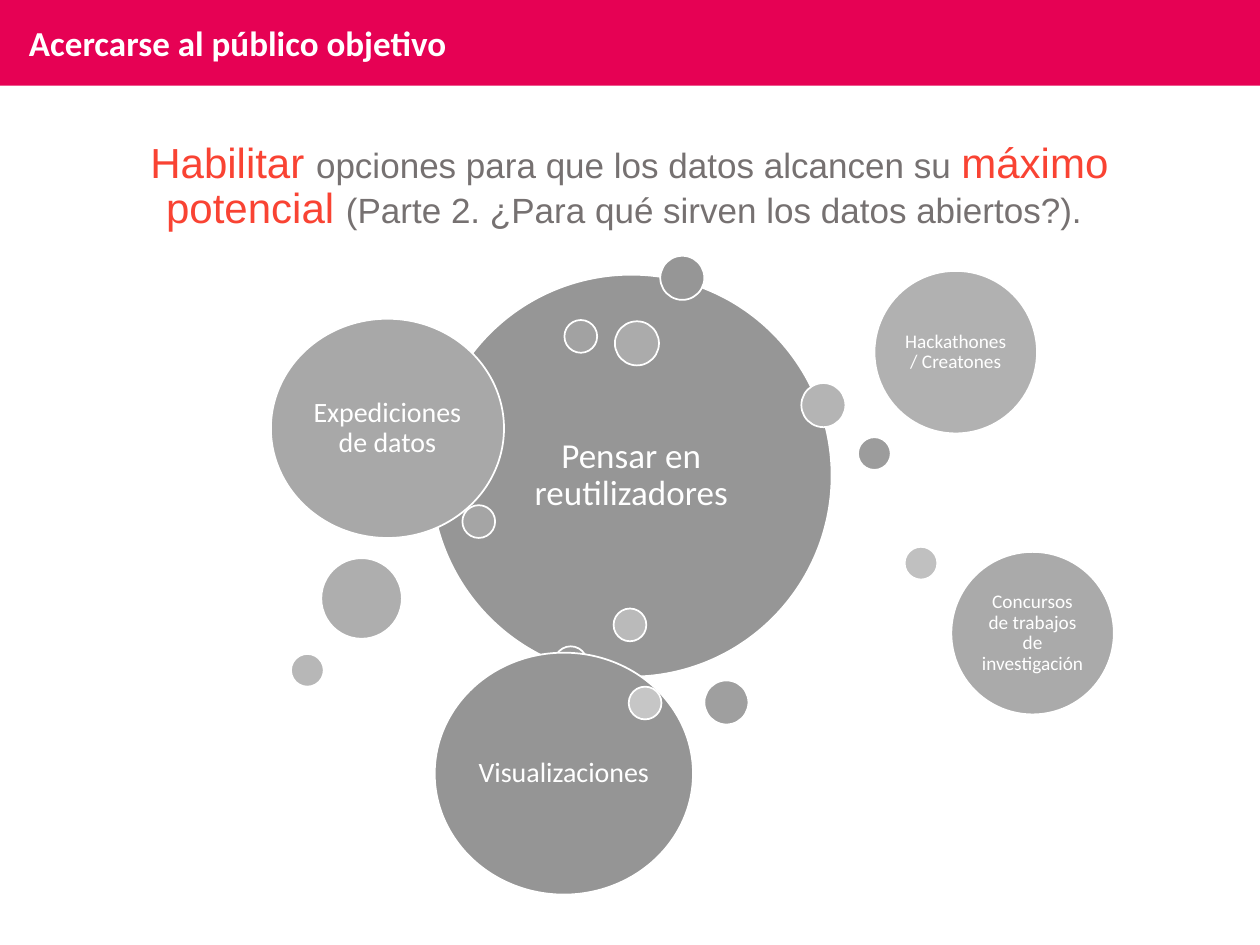
from pptx import Presentation
from pptx.dml.color import RGBColor
from pptx.enum.shapes import MSO_SHAPE as SHAPE
from pptx.enum.text import MSO_ANCHOR as ANCHOR, PP_ALIGN as ALIGN
from pptx.util import Inches, Pt

PINK = RGBColor(0xE6, 0x01, 0x54)
RED = RGBColor(0xF9, 0x43, 0x33)
GRAY = RGBColor(0x76, 0x71, 0x71)
WHITE = RGBColor(0xFF, 0xFF, 0xFF)

prs = Presentation()
prs.slide_width, prs.slide_height = Inches(10), Inches(7.5)
COL, ROW = prs.slide_width / 100, prs.slide_height / 75
slide = prs.slides.add_slide(prs.slide_layouts[5])
shapes = slide.shapes


def box(x, y, w, h):
    return int(x * COL), int(y * ROW), int(w * COL), int(h * ROW)


def style(r, font, size, color):
    r.font.name, r.font.size, r.font.color.rgb = font, Pt(size), color


band = shapes.add_shape(SHAPE.RECTANGLE, *box(0, 0, 100, 6.8))
band.shadow.inherit = False
band.fill.solid()
band.fill.fore_color.rgb = PINK
band.line.fill.background()

title = shapes.title
title.left, title.top, title.width, title.height = box(1.3, 1.2, 57.8, 4.4)
title.text_frame.text = "Acercarse al público objetivo"
p = title.text_frame.paragraphs[0]
p.alignment = ALIGN.LEFT
style(p.runs[0], "Calibri", 20, WHITE)
p.runs[0].font.bold = True
title._element.addprevious(band._element)

tf = shapes.add_textbox(*box(6.6, 10.8, 86.7, 41.4)).text_frame
tf.word_wrap = True
p = tf.paragraphs[0]
p.alignment, p.line_spacing, p.space_before = ALIGN.CENTER, 0.9, Pt(10)
for text, size, color in [
    ("Habilitar ", 24, RED),
    ("opciones para que los datos alcancen su ", 20, GRAY),
    ("máximo potencial ", 24, RED),
    ("(Parte 2. ¿Para qué sirven los datos abiertos?). ", 20, GRAY),
]:
    r = p.add_run()
    r.text = text
    style(r, "Arial", size, color)

S, M, L = 2.6, 3.5, 12.9
bubbles = [
    (34.2, 21.8, 31.8, 31.9, 0x96, "Pensar en reutilizadores", 20, 0.8, 0.8),
    (52.4, 20.3, M, M, 0x96),
    (44, 51.3, S, S, 0x99),
    (68.1, 34.7, S, S, 0x9C),
    (55.9, 54, M, M, 0x9F),
    (44.8, 25.4, S, S, 0xA2),
    (36.7, 40.1, S, S, 0xA5),
    (21.5, 25.3, 18.5, 17.4, 0xA8, "Expediciones de datos", 16, 0.2, 0.7),
    (48.8, 25.5, M, M, 0xAB),
    (25.5, 44.3, 6.4, 6.4, 0xAE),
    (69.4, 21.5, L, L, 0xB1, "Hackathones/ Creatones", 11, 0.5, 0.5),
    (63.6, 30.4, M, M, 0xB4),
    (23.1, 51.9, S, S, 0xB7),
    (48.7, 48.3, S, S, 0xBA),
    (75.5, 43.8, L, L, 0xAA, "Concursos de trabajos de investigación", 11, 0.5, 0.5),
    (71.8, 43.4, S, S, 0xC0),
    (34.5, 51.8, 20.5, 19.2, 0x95, "Visualizaciones", 16, 0, 0.7),
    (49.9, 54.5, S, S, 0xC6),
]
for x, y, w, h, gray, *label in bubbles:
    sp = shapes.add_shape(SHAPE.OVAL, *box(x, y, w, h))
    sp.shadow.inherit = False
    sp.fill.solid()
    sp.fill.fore_color.rgb = RGBColor(gray, gray, gray)
    sp.line.color.rgb, sp.line.width = WHITE, Pt(1)
    if label:
        text, size, pad_x, pad_y = label
        tf = sp.text_frame
        tf.word_wrap, tf.vertical_anchor = True, ANCHOR.MIDDLE
        tf.margin_left = tf.margin_right = int(pad_x * COL)
        tf.margin_top = tf.margin_bottom = int(pad_y * ROW)
        tf.text = text
        p = tf.paragraphs[0]
        p.alignment, p.line_spacing = ALIGN.CENTER, 0.9
        style(p.runs[0], "Calibri", size, WHITE)

prs.save("out.pptx")
